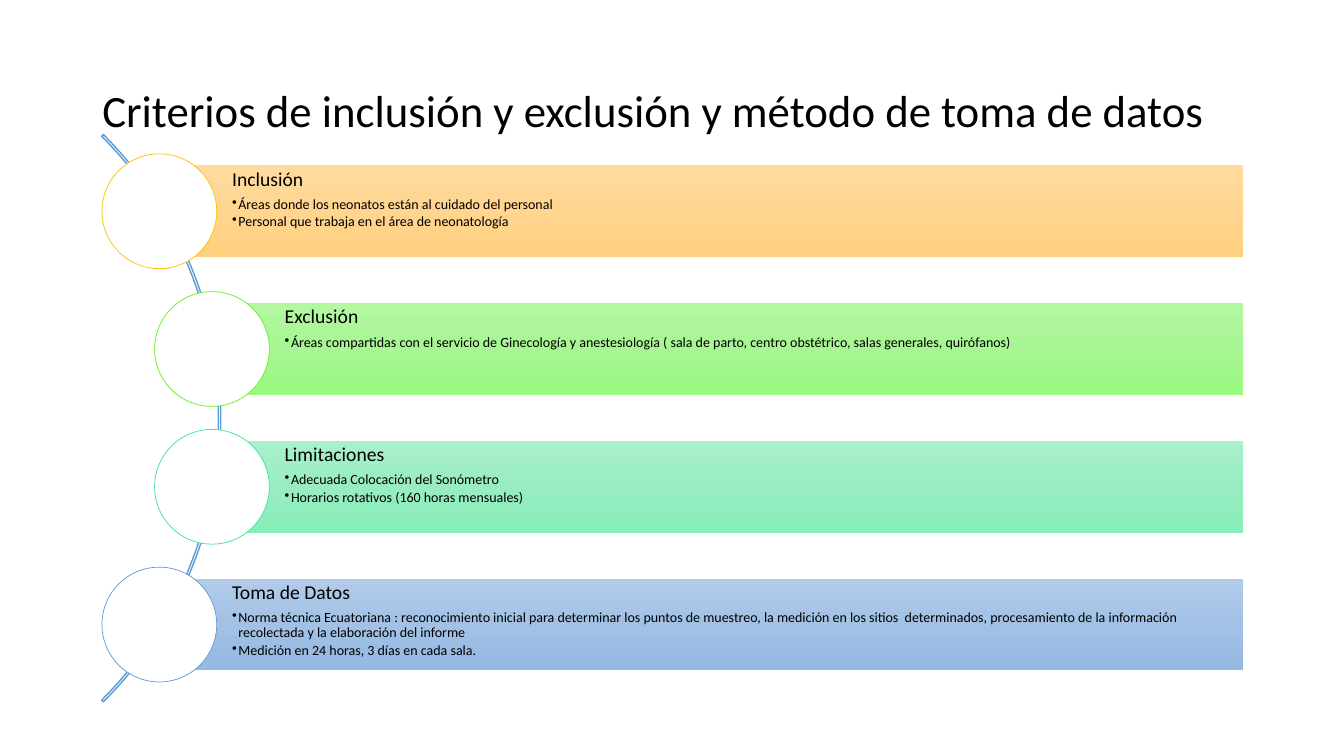
from copy import deepcopy

from lxml.etree import SubElement
from pptx import Presentation
from pptx.dml.color import RGBColor
from pptx.enum.shapes import MSO_SHAPE
from pptx.enum.text import MSO_ANCHOR, PP_ALIGN
from pptx.oxml.ns import qn
from pptx.util import Pt


def color(hex_value):
    return RGBColor.from_string(hex_value)


def add_text(paragraph, text, size, space_after=0):
    paragraph_format = {"alignment": PP_ALIGN.LEFT, "line_spacing": 0.9,
                        "space_before": Pt(0), "space_after": Pt(space_after)}
    for name, value in paragraph_format.items():
        setattr(paragraph, name, value)
    run = paragraph.add_run()
    run.text = text
    for name, value in {"name": "Calibri", "size": Pt(size)}.items():
        setattr(run.font, name, value)
    run.font.color.rgb = color("000000")


presentation = Presentation()
presentation.slide_width = Pt(960)
presentation.slide_height = Pt(540)
slide = presentation.slides.add_slide(presentation.slide_layouts[6])

# Title
title = slide.shapes.add_textbox(Pt(66), Pt(28.8), Pt(828), Pt(104.4))
title.text_frame.word_wrap = True
title.text_frame.vertical_anchor = MSO_ANCHOR.MIDDLE
add_text(title.text_frame.paragraphs[0],
         "Criterios de inclusión y exclusión y método de toma de datos", 32)

# Arc behind the circles
arc = slide.shapes.add_shape(MSO_SHAPE.BLOCK_ARC, Pt(-415.4), Pt(12.2), Pt(573.1), Pt(573.1))
arc.shadow.inherit = False
for index, value in enumerate((189, 27, 0.003)):
    arc.adjustments[index] = value
arc.fill.background()
arc.line.color.rgb = color("5B9BD5")
arc.line.width = Pt(1)

# Bands: heading, indent step, gradient, circle outline, bullets
bands = [
    ("Inclusión", 0, ("FFDB9E", "FFD590", "FFD07C"), "FFC000",
     ["Áreas donde los neonatos están al cuidado del personal",
      "Personal que trabaja en el área de neonatología"]),
    ("Exclusión", 1, ("B3F8A1", "A7F693", "98FA7E"), "67EF21",
     ["Áreas compartidas con el servicio de Ginecología y anestesiología "
      "( sala de parto, centro obstétrico, salas generales, quirófanos)"]),
    ("Limitaciones", 1, ("A8F0CA", "99ECC1", "86EEB9"), "3FE19B",
     ["Adecuada Colocación del Sonómetro",
      "Horarios rotativos (160 horas mensuales)"]),
    ("Toma de Datos", 0, ("B1CBE9", "A3C1E5", "93B9E4"), "5B9BD5",
     ["Norma técnica Ecuatoriana : reconocimiento inicial para determinar los puntos "
      "de muestreo, la medición en los sitios  determinados, procesamiento de la "
      "información recolectada y la elaboración del informe",
      "Medición en 24 horas, 3 días en cada sala."]),
]
FIRST_TOP, PITCH, BAND_HEIGHT = 118.1, 98.4, 65.6
FIRST_LEFT, STEP, RIGHT = 113.8, 37.6, 887.8
DIAMETER = 82
frame_format = {"word_wrap": True, "vertical_anchor": MSO_ANCHOR.TOP,
                "margin_left": Pt(52), "margin_top": Pt(2.8),
                "margin_right": Pt(2.8), "margin_bottom": Pt(2.8)}

for row, (heading, level, gradient, outline, bullets) in enumerate(bands):
    left = FIRST_LEFT + level * STEP
    top = FIRST_TOP + row * PITCH

    # Gradient band
    band = slide.shapes.add_shape(MSO_SHAPE.RECTANGLE, Pt(left), Pt(top),
                                  Pt(RIGHT - left), Pt(BAND_HEIGHT))
    band.shadow.inherit = False
    band.line.fill.background()
    band.fill.gradient()
    band.fill.gradient_angle = 270
    stop_list = band._element.spPr.find(".//" + qn("a:gsLst"))
    stop_list.insert(1, deepcopy(stop_list[0]))
    for stop, position, shade in zip(band.fill.gradient_stops, (0, 0.5, 1), gradient):
        stop.position = position
        stop.color.rgb = color(shade)

    # Heading and bullets
    frame = band.text_frame
    for name, value in frame_format.items():
        setattr(frame, name, value)
    add_text(frame.paragraphs[0], heading, 14, 4.9)
    for bullet in bullets:
        paragraph = frame.add_paragraph()
        properties = paragraph._p.get_or_add_pPr()
        properties.set("marL", str(Pt(4.5)))
        properties.set("indent", str(Pt(-4.5)))
        SubElement(properties, qn("a:buChar")).set("char", "•")
        add_text(paragraph, bullet, 10, 1.5)

    # Circle centred on the left edge of the band
    circle = slide.shapes.add_shape(
        MSO_SHAPE.OVAL, Pt(left - DIAMETER / 2),
        Pt(top + (BAND_HEIGHT - DIAMETER) / 2), Pt(DIAMETER), Pt(DIAMETER))
    circle.shadow.inherit = False
    circle.fill.solid()
    circle.fill.fore_color.rgb = color("FFFFFF")
    circle.line.color.rgb = color(outline)
    circle.line.width = Pt(0.5)

presentation.save("out.pptx")
